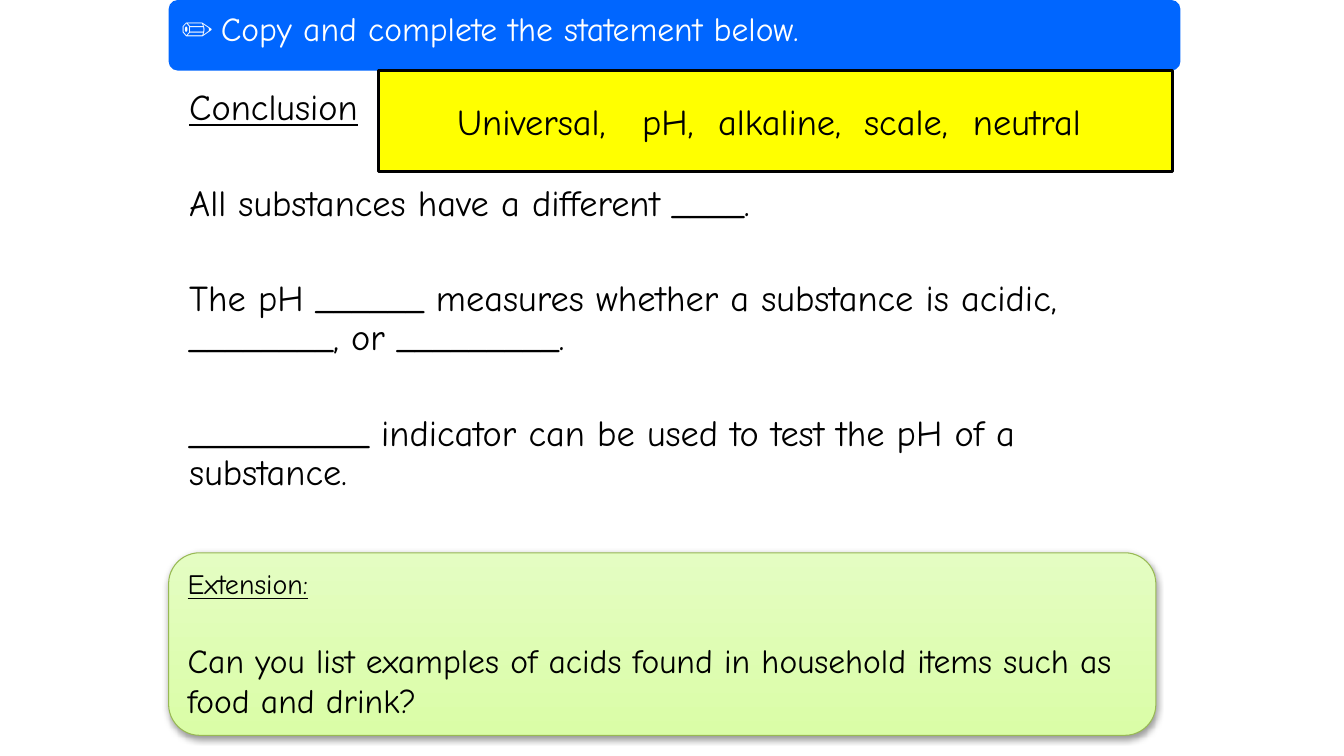
from dataclasses import dataclass
from typing import Optional

from lxml import etree
from pptx import Presentation
from pptx.dml.color import RGBColor
from pptx.enum.shapes import MSO_SHAPE
from pptx.enum.text import MSO_ANCHOR, PP_ALIGN
from pptx.oxml.ns import qn
from pptx.util import Cm, Pt

RECT = MSO_SHAPE.RECTANGLE
ROUNDED = MSO_SHAPE.ROUNDED_RECTANGLE
TOP, MIDDLE = MSO_ANCHOR.TOP, MSO_ANCHOR.MIDDLE
LEFT = PP_ALIGN.LEFT

BLACK = RGBColor(0x00, 0x00, 0x00)
WHITE = RGBColor(0xFF, 0xFF, 0xFF)
BLUE = RGBColor(0x00, 0x66, 0xFF)
YELLOW = RGBColor(0xFF, 0xFF, 0x00)
GREEN_DARK = RGBColor(0xDA, 0xFD, 0xA7)
GREEN_LIGHT = RGBColor(0xE4, 0xFD, 0xC2)
GREEN_LINE = RGBColor(0x98, 0xB9, 0x54)
FONT = "Comic Neue"
ICON_FONT = "Calibri"


@dataclass
class Line:
    text: str
    size: float
    underline: bool = False
    before: float = 0
    spacing: float = 1.0


@dataclass
class Panel:
    kind: int
    left: float
    top: float
    width: float
    height: float
    fills: list[RGBColor]
    line: Optional[RGBColor] = None
    line_width: float = 0
    radius: Optional[float] = None
    anchor: int = TOP


HEADER = Panel(ROUNDED, 4.25, 0, 25.5, 1.78, [BLUE], radius=0.13)
EXTENSION = Panel(ROUNDED, 4.25, 13.93, 24.88, 4.6, [GREEN_DARK, GREEN_LIGHT],
                  GREEN_LINE, 0.75, 0.17)
WORD_BANK = Panel(RECT, 9.53, 1.78, 20.02, 2.54, [YELLOW], BLACK, 2, anchor=MIDDLE)

WORDS = ["Universal,", "pH,", "alkaline,", "scale,", "neutral"]
WORD_STOPS = [4.66, 6.58, 10.26, 13.0]

STATEMENT = [
    Line("Conclusion", 26, True, 0, 0.9),
    Line("All substances have a different ____.", 26, False, 40, 0.9),
    Line("The pH ______ measures whether a substance is acidic, ________, or _________.",
         26, False, 40, 0.9),
    Line("__________ indicator can be used to test the pH of a substance.",
         26, False, 40, 0.9),
]
EXTENSION_TEXT = [
    Line("Extension:", 20, True),
    Line("Can you list examples of acids found in household items such as food and drink?",
         24, False, 28),
]


def add_panel(slide, panel: Panel):
    sp = slide.shapes.add_shape(panel.kind, Cm(panel.left), Cm(panel.top),
                                Cm(panel.width), Cm(panel.height))
    sp.shadow.inherit = False
    if panel.radius is not None:
        sp.adjustments[0] = panel.radius
    if len(panel.fills) == 1:
        sp.fill.solid()
        sp.fill.fore_color.rgb = panel.fills[0]
    else:
        sp.fill.gradient()
        sp.fill.gradient_angle = 90
        for stop, color in zip(sp.fill.gradient_stops, panel.fills):
            stop.color.rgb = color
    if panel.line is None:
        sp.line.fill.background()
    else:
        sp.line.color.rgb = panel.line
        sp.line.width = Pt(panel.line_width)
    sp.text_frame.word_wrap = True
    sp.text_frame.vertical_anchor = panel.anchor
    return sp


def add_shadow(sp) -> None:
    effects = sp._element.spPr.find(qn("a:effectLst"))
    shadow = etree.SubElement(effects, qn("a:outerShdw"), blurRad=str(Pt(5)),
                              dist=str(Pt(1.6)), dir="5400000", rotWithShape="0")
    color = etree.SubElement(shadow, qn("a:srgbClr"), val="000000")
    etree.SubElement(color, qn("a:alpha"), val="38000")


def add_tab_stops(p, stops: list[float]) -> None:
    tabs = etree.SubElement(p._p.get_or_add_pPr(), qn("a:tabLst"))
    for stop in stops:
        etree.SubElement(tabs, qn("a:tab"), pos=str(Cm(stop)), algn="l")


def format_run(r, size: float, color: RGBColor, name: str = FONT,
               underline: bool = False) -> None:
    r.font.name = name
    r.font.size = Pt(size)
    r.font.color.rgb = color
    r.font.underline = underline


def write_lines(tf, lines: list[Line]) -> None:
    tf.text = "\n".join(line.text for line in lines)
    for p, line in zip(tf.paragraphs, lines):
        p.alignment = LEFT
        p.line_spacing = line.spacing
        p.space_before = Pt(line.before)
        for r in p.runs:
            format_run(r, line.size, BLACK, underline=line.underline)


def write_header(tf) -> None:
    p = tf.paragraphs[0]
    p.alignment = LEFT
    pPr = p._p.get_or_add_pPr()
    pPr.set("marL", str(Cm(1)))
    pPr.set("indent", str(-Cm(1)))
    for text, name in [("✏\t", ICON_FONT),
                       ("Copy and complete the statement below.", FONT)]:
        r = p.add_run()
        r.text = text
        format_run(r, 24, WHITE, name)


def write_word_bank(tf) -> None:
    tf.margin_left = Cm(1.99)
    tf.text = "\t".join(WORDS)
    p = tf.paragraphs[0]
    p.alignment = LEFT
    add_tab_stops(p, WORD_STOPS)
    for r in p.runs:
        format_run(r, 26, BLACK)


def main() -> None:
    prs = Presentation()
    prs.slide_width, prs.slide_height = Cm(33.87), Cm(19.05)
    s = prs.slides.add_slide(prs.slide_layouts[6])

    statement = s.shapes.add_textbox(Cm(4.52), Cm(2.13), Cm(24.79), Cm(12.57))
    statement.text_frame.word_wrap = True
    write_lines(statement.text_frame, STATEMENT)

    write_header(add_panel(s, HEADER).text_frame)

    extension = add_panel(s, EXTENSION)
    add_shadow(extension)
    write_lines(extension.text_frame, EXTENSION_TEXT)

    write_word_bank(add_panel(s, WORD_BANK).text_frame)

    prs.save("out.pptx")


if __name__ == "__main__":
    main()
